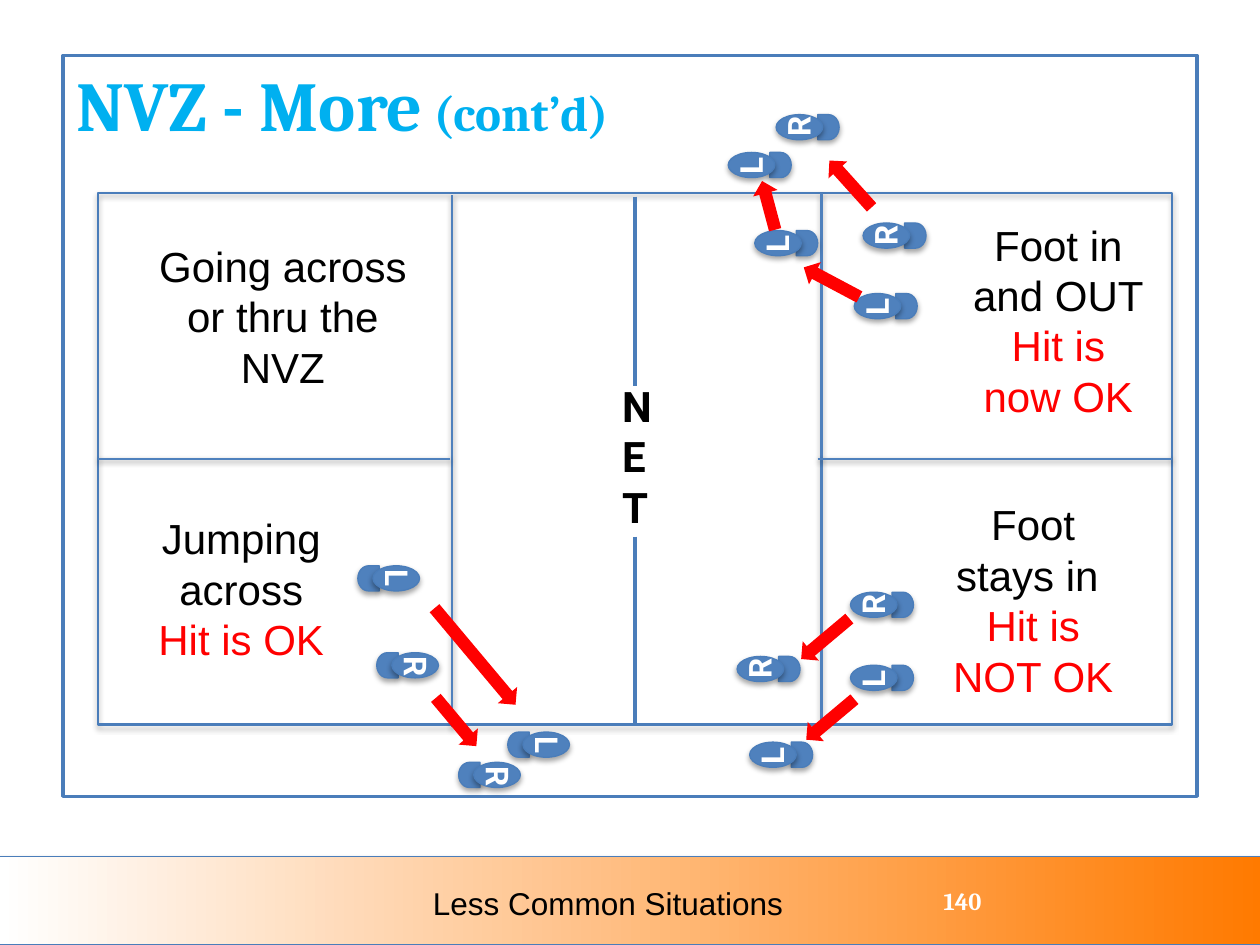
from dataclasses import dataclass
from lxml import etree
from pptx import Presentation
from pptx.dml.color import RGBColor
from pptx.enum.shapes import MSO_CONNECTOR, MSO_SHAPE
from pptx.enum.text import PP_ALIGN
from pptx.oxml.ns import qn
from pptx.util import Pt

PX = 9144
RECT, COURT = MSO_SHAPE.RECTANGLE, MSO_SHAPE.FLOWCHART_PROCESS
OVAL, HEEL = MSO_SHAPE.OVAL, MSO_SHAPE.FLOWCHART_DELAY
ARROW, LINE = MSO_SHAPE.LEFT_ARROW, MSO_CONNECTOR.STRAIGHT
LEFT, CENTER = PP_ALIGN.LEFT, PP_ALIGN.CENTER
HUES = {"edge": "4A7DBA", "blue": "4F81BD", "title": "00B0F0", "red": "FF0000",
        "black": "000000", "white": "FFFFFF", "orange": "FF7A00"}


@dataclass
class Label:
    box: tuple
    lines: list
    size: int = 24
    face: str = "Arial"
    bold: bool = False
    align: int = CENTER
    turn: int = 0


@dataclass
class Foot:
    name: str
    x: int
    y: int
    back: bool = False


@dataclass
class Step:
    x: int
    y: int
    wide: int
    turn: int


@dataclass
class Rule:
    ends: tuple
    hue: str = "blue"
    width: float = 1.25
    shade: int = 37
    join: tuple = ()


def color(name: str) -> RGBColor:
    return RGBColor.from_string(HUES[name])


def scale(box: tuple) -> list:
    return [n * PX for n in box]


def cast(item, alpha: int, dist: float = 1.8) -> None:
    effects = etree.SubElement(item._element.spPr, qn("a:effectLst"))
    if alpha:
        drop = etree.SubElement(effects, qn("a:outerShdw"), blurRad=str(Pt(3.1)),
                                dist=str(Pt(dist)), dir="5400000", rotWithShape="0")
        tint = etree.SubElement(drop, qn("a:srgbClr"), val=HUES["black"])
        etree.SubElement(tint, qn("a:alpha"), val=str(alpha * 1000))


def style(font, size: int, face: str, hue: str, bold: bool) -> None:
    font.size, font.name, font.bold = Pt(size), face, bold
    font.color.rgb = color(hue)


def draw(shapes, kind: int, box: tuple, fill: str = "", width: float = 0,
         shade: int = 0, turn: int = 0):
    shape = shapes.add_shape(kind, *scale(box))
    shape.rotation = turn
    if fill:
        shape.fill.solid()
        shape.fill.fore_color.rgb = color(fill)
    else:
        shape.fill.background()
    if width:
        shape.line.color.rgb = color("edge")
        shape.line.width = Pt(width)
    else:
        shape.line.fill.background()
    cast(shape, shade)
    return shape


def write(shapes, label: Label) -> None:
    box = shapes.add_textbox(*scale(label.box))
    box.rotation = label.turn
    frame = box.text_frame
    frame.word_wrap = True
    frame.text = "\n".join(text for text, _ in label.lines)
    for para, (_, hue) in zip(frame.paragraphs, label.lines):
        para.alignment = label.align
        style(para.runs[0].font, label.size, label.face, hue, label.bold)


def stand(shapes, foot: Foot) -> None:
    group = shapes.add_group_shape().shapes
    x, y = foot.x, foot.y
    turn = 180 if foot.back else 0
    heel = x - 12 if foot.back else x + 33
    spot = (x + 3, y - 10, 33, 40) if foot.back else (x + 1, y - 9, 33, 40)
    for kind, box in ((HEEL, (heel, y, 17, 20)), (OVAL, (x, y, 37, 20))):
        draw(group, kind, box, "blue", 0.75, 34, turn)
    write(group, Label(spot, [(foot.name, "white")], 18, "Roboto", True,
                       turn=90 if foot.back else 270))


def connect(shapes, rule: Rule, court) -> None:
    line = shapes.add_connector(LINE, *scale(rule.ends))
    line.line.color.rgb = color(rule.hue)
    line.line.width = Pt(rule.width)
    cast(line, rule.shade, 1.6)
    if rule.join:
        end, site = rule.join
        getattr(line, end)(court, site)


def head(shapes) -> None:
    frame = draw(shapes, RECT, (50, 44, 900, 588), width=2).text_frame
    frame.word_wrap = True
    frame.vertical_anchor = 1
    para = frame.paragraphs[0]
    para.alignment = LEFT
    props = para._p.get_or_add_pPr()
    props.set("marL", str(38 * PX))
    props.set("indent", str(-37 * PX))
    for text, size in (("NVZ - More", 40), (" (cont’d)", 28)):
        run = para.add_run()
        run.text = text
        style(run.font, size, "Cambria", "title", True)


def base(shapes) -> None:
    bar = draw(shapes, RECT, (-1, 680, 1003, 70), width=0.75, shade=34)
    bar.fill.gradient()
    bar.fill.gradient_angle = 0
    for stop, hue, place in zip(bar.fill.gradient_stops, ("white", "orange"), (0, 1)):
        stop.color.rgb = color(hue)
        stop.position = place


LABELS = [
    Label((739, 698, 81, 32), [("140", "white")], 14, "Cambria", True, LEFT),
    Label((300, 697, 365, 40), [("Less Common Situations", "black")], 18),
    Label((484, 297, 43, 131), [("NE", "black"), ("T", "black")], 24, "Roboto", True, LEFT),
    Label((100, 402, 183, 131), [("Jumping across", "black"), ("Hit is OK", "red")]),
    Label((760, 169, 160, 171), [("Foot in and OUT", "black"), ("Hit is now OK", "red")]),
    Label((110, 186, 229, 131), [("Going across or thru the NVZ", "black")]),
    Label((740, 391, 160, 172), [("Foot stays in ", "black"), ("Hit is NOT OK", "red")]),
]
RULES = [
    Rule((359, 155, 359, 577)),
    Rule((652, 153, 652, 576)),
    Rule((78, 364, 357, 364), join=("begin_connect", 1)),
    Rule((649, 364, 930, 364), join=("end_connect", 3)),
    Rule((504, 156, 504, 306), "edge", 2.5, 0),
    Rule((504, 426, 504, 576), "edge", 2.5, 0),
]
FEET = [
    Foot("R", 616, 91), Foot("L", 578, 121), Foot("R", 685, 177),
    Foot("R", 675, 470), Foot("R", 585, 521), Foot("R", 311, 518, True),
    Foot("L", 599, 183), Foot("L", 675, 528), Foot("L", 678, 233),
    Foot("L", 595, 589), Foot("L", 415, 581, True),
    Foot("R", 376, 605, True), Foot("L", 296, 449, True),
]
STEPS = [
    Step(635, 214, 50, 28), Step(650, 136, 50, 48), Step(590, 153, 40, 75),
    Step(337, 563, 50, 230), Step(630, 497, 50, 320), Step(634, 561, 50, 320),
    Step(327, 511, 100, 230),
]


def main() -> None:
    deck = Presentation()
    deck.slide_width, deck.slide_height = scale((1000, 750))
    shapes = deck.slides.add_slide(deck.slide_layouts[6]).shapes
    base(shapes)
    head(shapes)
    court = draw(shapes, COURT, (78, 153, 852, 422), width=1.25, shade=34)
    for rule in RULES:
        connect(shapes, rule, court)
    for label in LABELS:
        write(shapes, label)
    for foot in FEET:
        stand(shapes, foot)
    for step in STEPS:
        draw(shapes, ARROW, (step.x, step.y, step.wide, 20), "red", turn=step.turn)
    deck.save("out.pptx")


if __name__ == "__main__":
    main()
